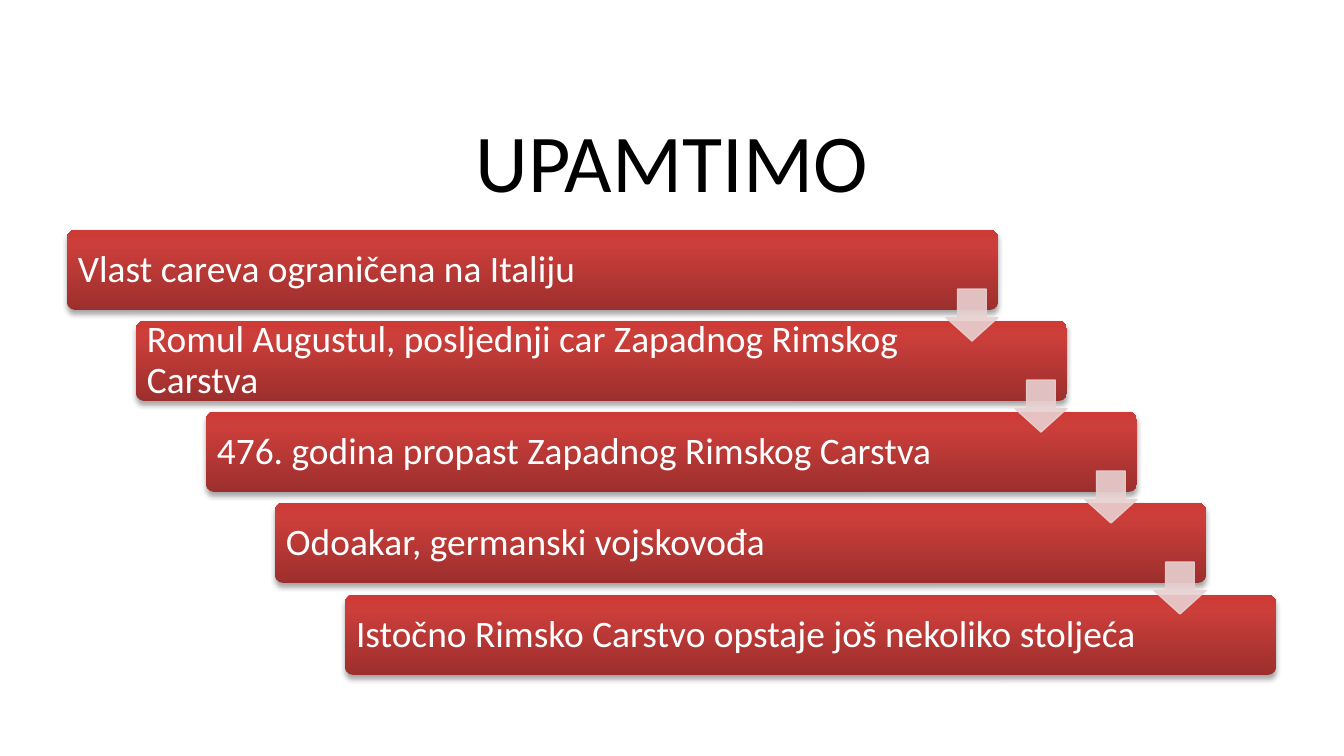
from copy import deepcopy
from dataclasses import dataclass

from lxml.etree import SubElement
from pptx import Presentation
from pptx.dml.color import RGBColor
from pptx.enum.shapes import MSO_SHAPE as Preset
from pptx.enum.text import MSO_ANCHOR as Anchor, MSO_AUTO_SIZE as AutoSize, PP_ALIGN as Align
from pptx.oxml.ns import qn
from pptx.util import Emu, Pt

EMU_PER_PX = 914400 / 134.4
TITLE_ONLY = 5

STATEMENTS = [
    "Vlast careva ograničena na Italiju",
    "Romul Augustul, posljednji car Zapadnog Rimskog Carstva",
    "476. godina propast Zapadnog Rimskog Carstva",
    "Odoakar, germanski vojskovođa",
    "Istočno Rimsko Carstvo opstaje još nekoliko stoljeća",
]


@dataclass(frozen=True)
class Theme:
    font: str = "Calibri"
    title_size: int = 44
    label_size: int = 20
    title_color: str = "000000"
    label_color: str = "FFFFFF"
    arrow_color: str = "E8D0D0"
    shadow_color: str = "000000"
    bar_stops: tuple = ((0, "9C2F2D"), (0.8, "CB3E3A"), (1, "CE3B37"))


def px(length):
    return Emu(round(length * EMU_PER_PX))


def apply(target, values):
    for name, value in values.items():
        setattr(target, name, value)


def add_alpha(color_element, percent):
    SubElement(color_element, qn("a:alpha"), val=str(percent * 1000))


class SlideBuilder:
    def __init__(self, slide, theme):
        self.slide = slide
        self.theme = theme

    def set_text(self, shape, text, size, color, frame_format, paragraph_format):
        frame = shape.text_frame
        frame.text = text
        apply(frame, {"word_wrap": True, "auto_size": AutoSize.NONE,
                      "vertical_anchor": Anchor.MIDDLE, **frame_format})
        paragraph = frame.paragraphs[0]
        apply(paragraph, {"line_spacing": 0.9, **paragraph_format})
        font = paragraph.runs[0].font
        apply(font, {"name": self.theme.font, "size": Pt(size)})
        font.color.rgb = RGBColor.from_string(color)

    def title(self, text, left, top, width, height):
        shape = self.slide.shapes.title
        apply(shape, {"left": px(left), "top": px(top),
                      "width": px(width), "height": px(height)})
        self.set_text(shape, text, self.theme.title_size, self.theme.title_color,
                      {}, {"alignment": Align.CENTER})

    def preset(self, kind, adjustments, *box):
        shape = self.slide.shapes.add_shape(kind, *map(px, box))
        for index, value in enumerate(adjustments):
            shape.adjustments[index] = value
        shape.shadow.inherit = False
        return shape

    def bar(self, *box):
        """Add a rounded bar with a vertical gradient and a soft shadow below."""
        shape = self.preset(Preset.ROUNDED_RECTANGLE, [0.1], *box)
        shape.line.fill.background()
        shape.fill.gradient()
        shape.fill.gradient_angle = 90
        properties = shape.element.spPr
        stop_list = properties.find(qn("a:gradFill")).find(qn("a:gsLst"))
        stop_list.append(deepcopy(stop_list[-1]))
        for stop, (position, color) in zip(shape.fill.gradient_stops, self.theme.bar_stops):
            stop.position = position
            stop.color.rgb = RGBColor.from_string(color)
        shadow = SubElement(
            properties.find(qn("a:effectLst")), qn("a:outerShdw"),
            blurRad=str(Pt(3.1)), dist=str(Pt(1.8)), dir="5400000", rotWithShape="0")
        add_alpha(SubElement(shadow, qn("a:srgbClr"), val=self.theme.shadow_color), 35)

    def label(self, text, *box):
        shape = self.slide.shapes.add_textbox(*map(px, box))
        margins = {f"margin_{side}": px(11) for side in ("left", "top", "right", "bottom")}
        self.set_text(shape, text, self.theme.label_size, self.theme.label_color,
                      margins, {"alignment": Align.LEFT})

    def arrow(self, *box):
        shape = self.preset(Preset.DOWN_ARROW, [0.55, 0.45], *box)
        shape.line.width = Pt(0.75)
        for fill in (shape.fill, shape.line.fill):
            fill.solid()
            fill.fore_color.rgb = RGBColor.from_string(self.theme.arrow_color)
        for color in shape.element.spPr.iter(qn("a:srgbClr")):
            add_alpha(color, 90)


def main():
    presentation = Presentation()
    apply(presentation, {"slide_width": px(1344), "slide_height": px(756)})
    slide = presentation.slides.add_slide(presentation.slide_layouts[TITLE_ONLY])
    builder = SlideBuilder(slide, Theme())
    builder.title("UPAMTIMO", 67, 113, 1210, 105)

    # Five bars descend to the right in equal steps.
    steps = [(139 * index // 2, 365 * index // 4) for index in range(len(STATEMENTS))]
    for index, (text, (across, down)) in enumerate(zip(STATEMENTS, steps)):
        left, top = 67 + across, 230 + down
        builder.bar(left, top, 931, 80)
        builder.label(text, left, top, 809 if index else 840, 80)
    for across, down in steps[:-1]:
        builder.arrow(946 + across, 289 + down, 52, 52)

    presentation.save("out.pptx")


if __name__ == "__main__":
    main()
